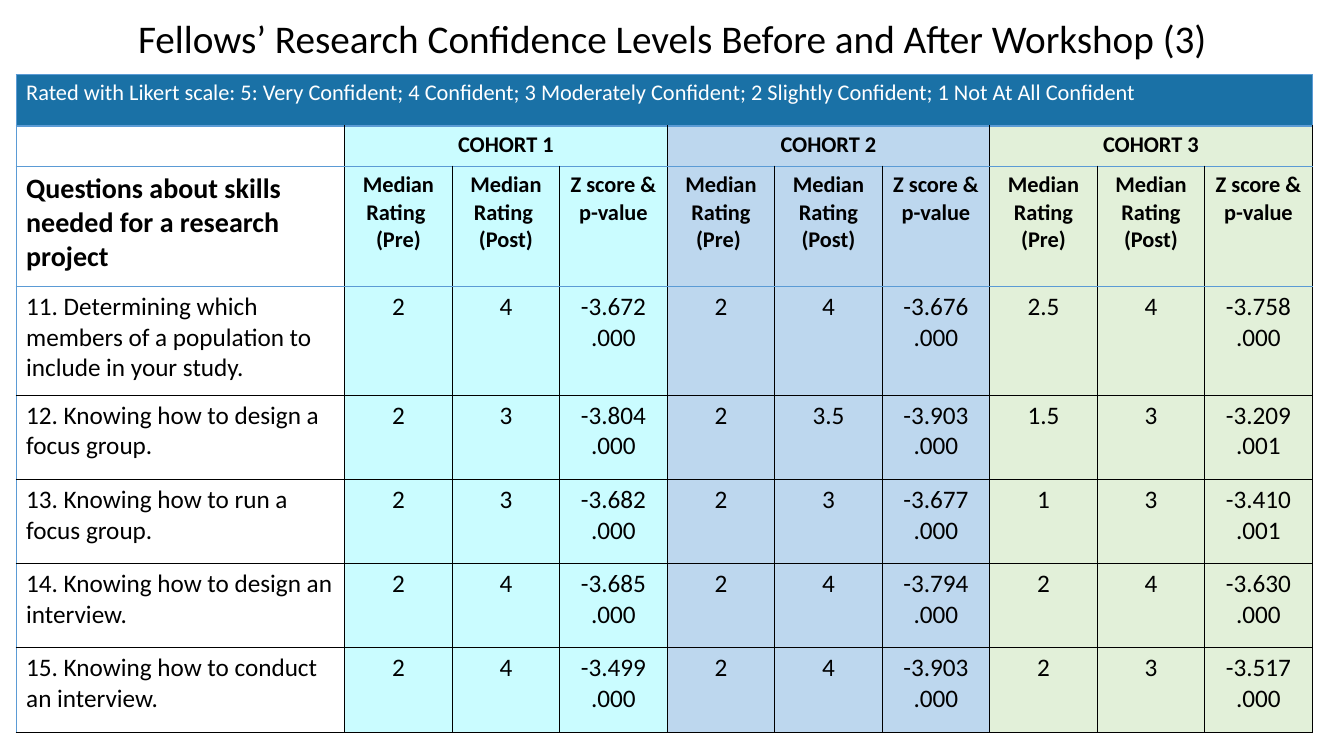
from pptx import Presentation
from pptx.util import Pt
from pptx.dml.color import RGBColor as RGB
from pptx.enum.text import PP_ALIGN as Align, MSO_ANCHOR as Anchor, MSO_AUTO_SIZE as Fit
from pptx.oxml.ns import qn
from lxml.etree import SubElement as Sub

HUES = {
    "ink": "000000", "white": "FFFFFF", "head": "1A71A6", "line": "5B9BD5",
    "one": "CAFCFF", "two": "BDD7EE", "three": "E2F0D9",
}
TEAMS = ("one", "two", "three")

TITLE = "Fellows’ Research Confidence Levels Before and After Workshop (3)"
SCALE = ("Rated with Likert scale: 5: Very Confident; 4 Confident; "
         "3 Moderately Confident; 2 Slightly Confident; 1 Not At All Confident")
ASK = "Questions about skills needed for a research project"
HEADS = [
    "Median Rating \n(Pre)", "Median Rating \n(Post)", "Z score & p-value",
    "Median Rating (Pre) ", "Median Rating (Post)", "Z score & p-value",
    "Median Rating (Pre)", "Median Rating (Post)", "Z score & p-value",
]
# Question, then pre, post, z score and p-value for each cohort
SKILLS = [
    ("11. Determining which members of a population to include in your study.",
     "2 4 -3.672\n.000", "2 4 -3.676\n.000", "2.5 4 -3.758\n.000"),
    ("12. Knowing how to design a focus group.",
     "2 3 -3.804\n.000", "2 3.5 -3.903\n.000", "1.5 3 -3.209\n.001"),
    ("13. Knowing how to run a focus group.",
     "2 3 -3.682\n.000", "2 3 -3.677\n.000", "1 3 -3.410\n.001"),
    ("14. Knowing how to design an interview.",
     "2 4 -3.685\n.000", "2 4 -3.794\n.000", "2 4 -3.630\n.000"),
    ("15. Knowing how to conduct an interview.",
     "2 4 -3.499\n.000", "2 4 -3.903\n.000", "2 3 -3.517\n.000"),
]
WIDTHS = [234.7] + [76.8] * 9
HEIGHTS = [36.7, 28.8, 85.7, 77.8] + [60.2] * 4


def write(frame, text, size=18, bold=False, hue="ink", align=Align.LEFT, font="Calibri"):
    for i, line in enumerate(text.split("\n")):
        par = frame.add_paragraph() if i else frame.paragraphs[0]
        par.alignment = align
        run = par.add_run()
        run.text = line
        run.font.name, run.font.size, run.font.bold = font, Pt(size), bold
        run.font.color.rgb = RGB.from_string(HUES[hue])


class Deck:
    def __init__(self, wide, high):
        self.prs = Presentation()
        self.prs.slide_width, self.prs.slide_height = Pt(wide), Pt(high)
        self.slide = self.prs.slides.add_slide(self.prs.slide_layouts[5])

    def title(self, text, left, top, wide, high):
        box = self.slide.shapes.title
        box.left, box.top, box.width, box.height = map(Pt, (left, top, wide, high))
        frame = box.text_frame
        frame.word_wrap, frame.auto_size = True, Fit.NONE
        frame.vertical_anchor = Anchor.TOP
        write(frame, text, size=28, align=Align.CENTER)

    def table(self, left, top, widths, heights):
        grid = self.slide.shapes.add_table(
            len(heights), len(widths), Pt(left), Pt(top),
            Pt(sum(widths)), Pt(sum(heights))).table
        grid.first_row = grid.horz_banding = False
        for col, wide in zip(grid.columns, widths):
            col.width = Pt(wide)
        for row, high in zip(grid.rows, heights):
            row.height = Pt(high)
        return grid

    def cell(self, cell, fill, sides):
        # Border lines come before the fill in a cell's properties
        props = cell._tc.get_or_add_tcPr()
        for side, hue in sides.items():
            line = Sub(props, qn(f"a:ln{side}"), w=str(Pt(1)))
            Sub(Sub(line, qn("a:solidFill")), qn("a:srgbClr"), val=HUES[hue])
        cell.fill.solid()
        cell.fill.fore_color.rgb = RGB.from_string(HUES[fill])

    def save(self):
        self.prs.save("out.pptx")


def main():
    deck = Deck(960, 540)
    deck.title(TITLE, 23, 6.5, 914.4, 41)
    grid = deck.table(11.5, 53.3, WIDTHS, HEIGHTS)

    # Fills and borders
    for r in range(len(HEIGHTS)):
        for c in range(len(WIDTHS)):
            fill = "head" if r == 0 else TEAMS[(c - 1) // 3] if c else "white"
            blue = {"L": c == 0 or r == 0, "R": r == 0, "T": r <= 3, "B": r <= 2}
            deck.cell(grid.cell(r, c), fill,
                      {side: "line" if on else "ink" for side, on in blue.items()})

    # Scale and cohort bands
    grid.cell(0, 0).merge(grid.cell(0, 9))
    write(grid.cell(0, 0).text_frame, SCALE, size=16, hue="white")
    write(grid.cell(1, 0).text_frame, "", size=16)
    for i in range(3):
        c = 1 + 3 * i
        grid.cell(1, c).merge(grid.cell(1, c + 2))
        write(grid.cell(1, c).text_frame, f"COHORT {i + 1}",
              size=16, bold=True, align=Align.CENTER)

    # Column heads
    write(grid.cell(2, 0).text_frame, ASK, size=20, bold=True)
    for c, head in enumerate(HEADS, 1):
        write(grid.cell(2, c).text_frame, head, size=16, bold=True, align=Align.CENTER)

    # Ratings
    for r, (skill, *teams) in enumerate(SKILLS, 3):
        write(grid.cell(r, 0).text_frame, skill)
        for c, mark in enumerate(" ".join(teams).split(" "), 1):
            write(grid.cell(r, c).text_frame, mark, align=Align.CENTER)

    deck.save()


if __name__ == "__main__":
    main()
